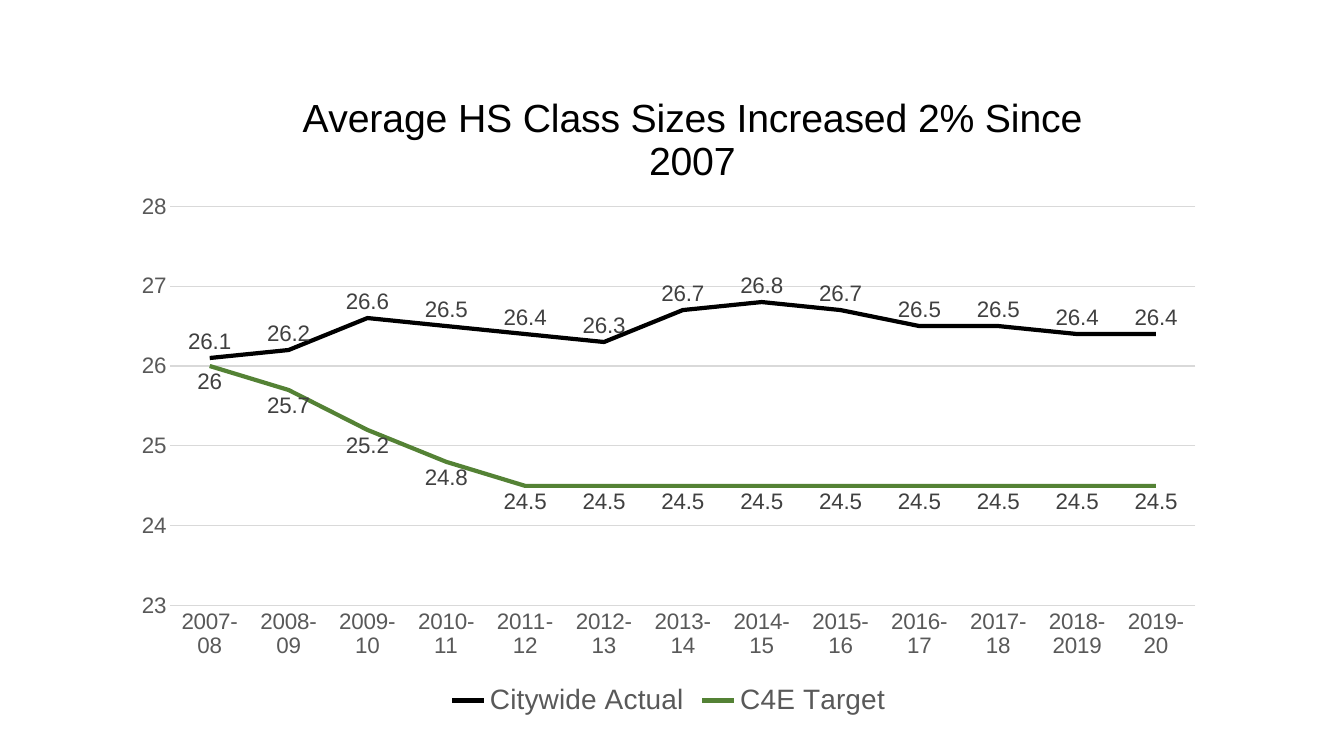
import pptx
import pptx.chart.data
import pptx.dml.color
import pptx.enum.chart
import pptx.oxml
import pptx.oxml.ns
import pptx.util
from pptx.util import Cm, Pt

TITLE = "Average HS Class Sizes Increased 2% Since 2007"
YEARS = ["2007-08", "2008-09", "2009-10", "2010-11", "2011-12", "2012-13", "2013-14",
         "2014-15", "2015-16", "2016-17", "2017-18", "2018-2019", "2019-20"]
POSITION = pptx.enum.chart.XL_LABEL_POSITION
SERIES = [
    ("Citywide Actual", "actual", POSITION.ABOVE,
     [26.1, 26.2, 26.6, 26.5, 26.4, 26.3, 26.7, 26.8, 26.7, 26.5, 26.5, 26.4, 26.4]),
    ("C4E Target", "target", POSITION.BELOW, [26, 25.7, 25.2, 24.8] + [24.5] * 9),
]
THEME = {
    "font": "Arial",
    "colors": {"title": "000000", "axis": "595959", "label": "404040",
               "grid": "D9D9D9", "actual": "000000", "target": "548235"},
    "sizes": {"base": 10, "title": 28, "axis": 16, "label": 16, "legend": 20},
}
CHART_BOX = (Cm(3.02), Cm(1.68), Cm(27.66), Cm(16.51))
TITLE_LAYOUT = {"x": 0.16, "y": 0.03}
PLOT_LAYOUT = {"x": 0.046, "y": 0.213, "w": 0.934, "h": 0.61}


def color(name):
    return pptx.dml.color.RGBColor.from_string(THEME["colors"][name])


def set_font(font, size, shade):
    font.name = THEME["font"]
    font.size = Pt(THEME["sizes"][size])
    font.bold = False
    font.color.rgb = color(shade)


def set_line(line, shade, width):
    line.color.rgb = color(shade)
    line.width = Pt(width)


def place(parent, index, box, inner=False):
    qn = pptx.oxml.ns.qn
    old = parent.find(qn("c:layout"))
    if old is not None:
        parent.remove(old)
    target = '<c:layoutTarget val="inner"/>' if inner else ""
    modes = "".join(f'<c:{key}Mode val="edge"/>' for key in "xy")
    values = "".join(f'<c:{key} val="{value}"/>' for key, value in box.items())
    parent.insert(index, pptx.oxml.parse_xml(
        f'<c:layout {pptx.oxml.ns.nsdecls("c")}><c:manualLayout>'
        f"{target}{modes}{values}</c:manualLayout></c:layout>"))


def add_class_size_chart(slide):
    data = pptx.chart.data.CategoryChartData(number_format="General")
    data.categories = YEARS
    for name, _, _, values in SERIES:
        data.add_series(name, values)
    chart = slide.shapes.add_chart(
        pptx.enum.chart.XL_CHART_TYPE.LINE, *CHART_BOX, data).chart
    set_font(chart.font, "base", "title")

    chart.has_title = True
    tf = chart.chart_title.text_frame
    tf.text = TITLE
    set_font(tf.paragraphs[0].font, "title", "title")
    chart.chart_title.include_in_layout = False
    place(chart.chart_title._element, 1, TITLE_LAYOUT)
    place(chart._chartSpace.chart.plotArea, 0, PLOT_LAYOUT, inner=True)

    chart.has_legend = True
    chart.legend.position = pptx.enum.chart.XL_LEGEND_POSITION.BOTTOM
    chart.legend.include_in_layout = False
    set_font(chart.legend.font, "legend", "axis")

    years, sizes = chart.category_axis, chart.value_axis
    for axis in (years, sizes):
        axis.major_tick_mark = pptx.enum.chart.XL_TICK_MARK.NONE
        axis.minor_tick_mark = pptx.enum.chart.XL_TICK_MARK.NONE
        set_font(axis.tick_labels.font, "axis", "axis")
    set_line(years.format.line, "grid", 0.75)
    sizes.format.line.fill.background()
    sizes.minimum_scale, sizes.maximum_scale, sizes.major_unit = 23, 28, 1
    sizes.has_major_gridlines = True
    set_line(sizes.major_gridlines.format.line, "grid", 0.75)

    plot = chart.plots[0]
    plot.vary_by_categories = False
    for series, (_, shade, position, _) in zip(plot.series, SERIES):
        series.smooth = False
        series.marker.style = pptx.enum.chart.XL_MARKER_STYLE.NONE
        set_line(series.format.line, shade, 3)
        labels = series.data_labels
        labels.show_value = True
        labels.position = position
        set_font(labels.font, "label", "label")


def main():
    prs = pptx.Presentation()
    prs.slide_width, prs.slide_height = Cm(33.87), Cm(19.05)
    slide = prs.slides.add_slide(prs.slide_layouts[6])
    add_class_size_chart(slide)
    prs.save("out.pptx")


if __name__ == "__main__":
    main()
